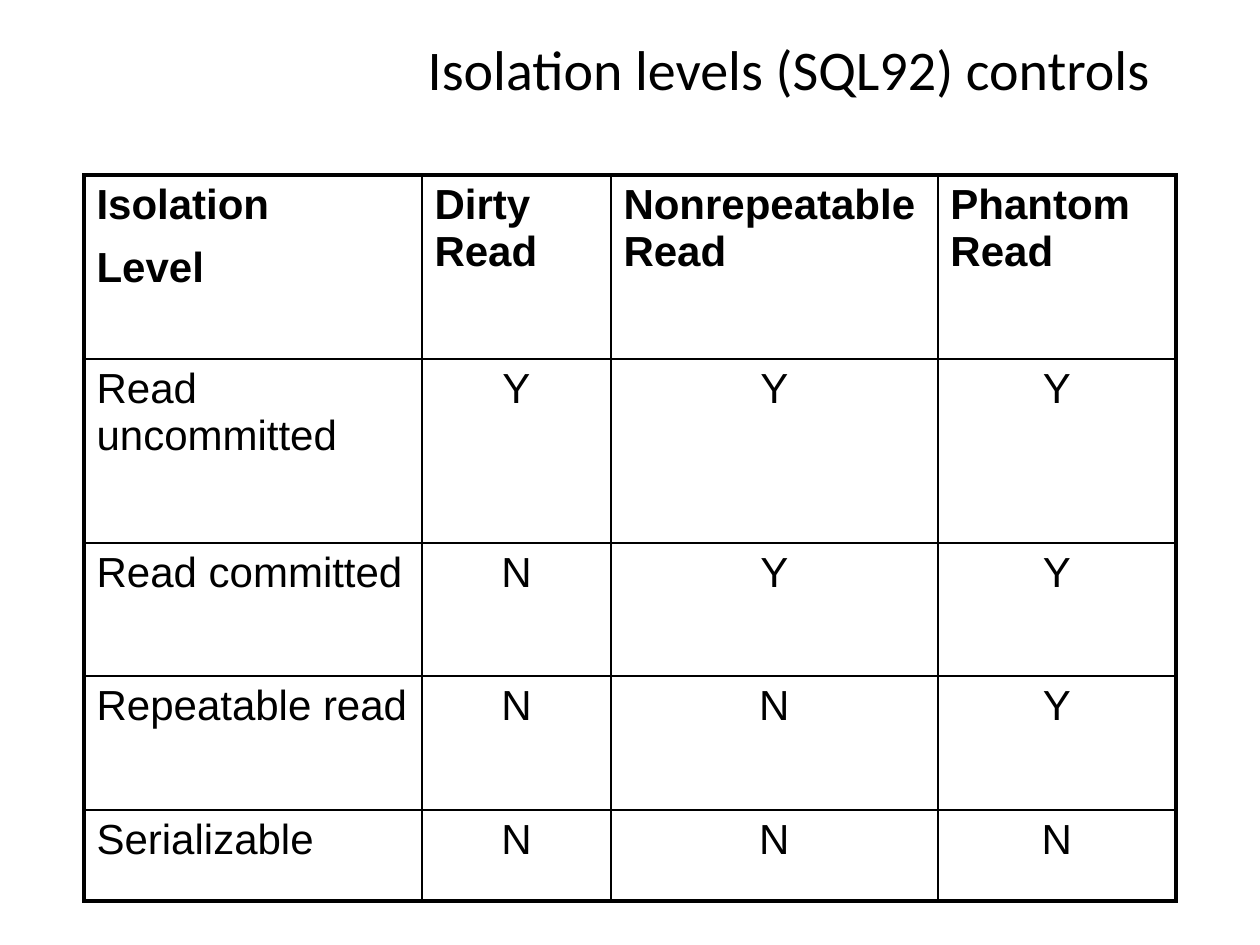
from dataclasses import dataclass

from lxml import etree
from pptx import Presentation, util as u
from pptx.dml.color import RGBColor
from pptx.enum import text
from pptx.oxml import ns

PX = 914400 // 126


@dataclass(frozen=True)
class Theme:
    ink: str = "000000"
    head: str = "Calibri"
    body: str = "Arial"
    head_pt: int = 32
    body_pt: int = 24
    gap_pt: float = 9.6
    thin: float = 1
    thick: float = 2.25


THEME = Theme()
COLS = [338, 189, 327, 238]
ROWS = [184, 184, 133, 134, 91]
LEVELS = [
    ["Isolation\nLevel", "Dirty Read", "Nonrepeatable Read", "Phantom Read"],
    ["Read uncommitted", "Y", "Y", "Y"],
    ["Read committed", "N", "Y", "Y"],
    ["Repeatable read", "N", "N", "Y"],
    ["Serializable", "N", "N", "N"],
]


def px(*vals):
    return [u.Emu(v * PX) for v in vals]


def style(par, face, size, bold=False, center=False):
    par.alignment = text.PP_ALIGN.CENTER if center else text.PP_ALIGN.LEFT
    for run in par.runs:
        font = run.font
        font.name, font.size, font.bold = face, u.Pt(size), bold
        font.color.rgb = RGBColor.from_string(THEME.ink)


def add_title(slide, words, *box):
    frame = slide.shapes.add_textbox(*px(*box)).text_frame
    frame.word_wrap = True
    frame.vertical_anchor = text.MSO_ANCHOR.MIDDLE
    frame.text = words
    style(frame.paragraphs[0], THEME.head, THEME.head_pt, center=True)


def set_edges(cell, outer):
    """Draw the four borders, thick on the sides named in outer."""
    props = cell._tc.get_or_add_tcPr()
    for pos, side in enumerate("LRTB"):
        width = THEME.thick if side in outer else THEME.thin
        line = etree.Element(ns.qn(f"a:ln{side}"), w=str(u.Pt(width)))
        fill = etree.SubElement(line, ns.qn("a:solidFill"))
        etree.SubElement(fill, ns.qn("a:srgbClr"), val=THEME.ink)
        props.insert(pos, line)


def fill_cell(cell, words, head, center):
    cell.fill.background()
    cell.text_frame.text = words
    for i, par in enumerate(cell.text_frame.paragraphs):
        style(par, THEME.body, THEME.body_pt, head, center)
        if i:
            par.space_before = u.Pt(THEME.gap_pt)


def add_grid(slide, left, top):
    box = px(left, top, sum(COLS), sum(ROWS))
    grid = slide.shapes.add_table(len(ROWS), len(COLS), *box).table
    grid.first_row = grid.horz_banding = False
    for col, width in zip(grid.columns, px(*COLS)):
        col.width = width
    for row, height in zip(grid.rows, px(*ROWS)):
        row.height = height
    for r, row in enumerate(LEVELS):
        for c, words in enumerate(row):
            cell = grid.cell(r, c)
            fill_cell(cell, words, head=r == 0, center=r > 0 and c > 0)
            ends = {"L": c == 0, "R": c == len(COLS) - 1,
                    "T": r == 0, "B": r == len(ROWS) - 1}
            set_edges(cell, [side for side, edge in ends.items() if edge])


def main():
    deck = Presentation()
    deck.slide_width, deck.slide_height = px(1260, 945)
    slide = deck.slides.add_slide(deck.slide_layouts[6])
    add_title(slide, "Isolation levels (SQL92) controls", 318, 18, 942, 100)
    add_grid(slide, 84, 175)
    deck.save("out.pptx")


if __name__ == "__main__":
    main()
